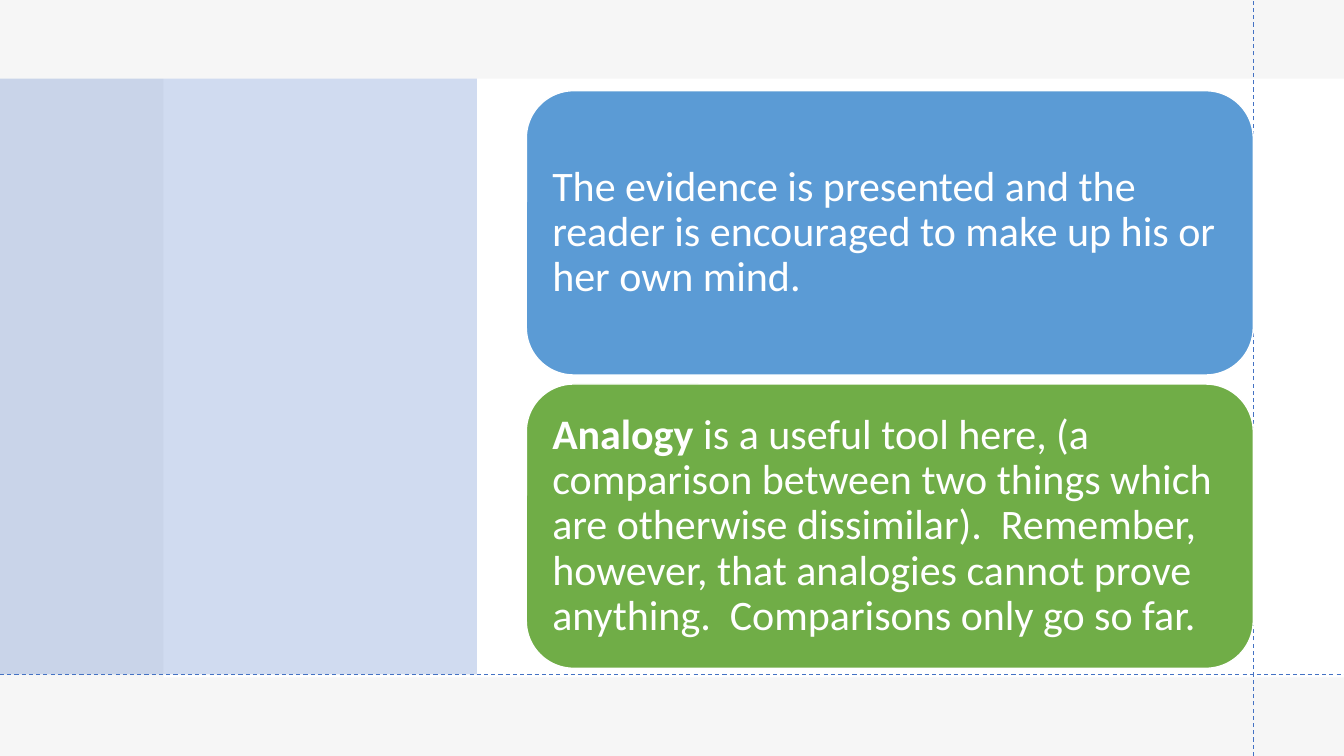
from pptx import Presentation
from pptx.dml.color import RGBColor
from pptx.enum.dml import MSO_LINE
from pptx.enum.shapes import MSO_CONNECTOR, MSO_SHAPE
from pptx.enum.text import MSO_ANCHOR, PP_ALIGN
from pptx.oxml.ns import qn
from pptx.util import Inches, Pt
from lxml.etree import SubElement

COLORS = {
    "white": "FFFFFF",
    "gray": "E7E6E6",
    "accent": "4472C4",
    "blue": "5B9BD5",
    "green": "70AD47",
}

presentation = Presentation()
presentation.slide_width = Inches(13.33)
presentation.slide_height = Inches(7.5)
slide = presentation.slides.add_slide(presentation.slide_layouts[6])


def add_box(kind, box, color, opacity=100):
    shape = slide.shapes.add_shape(kind, *[Inches(length) for length in box])
    shape.shadow.inherit = False
    shape.fill.solid()
    shape.fill.fore_color.rgb = RGBColor.from_string(COLORS[color])
    shape.line.fill.background()
    if opacity < 100:
        fill_color = shape._element.spPr.find(qn("a:solidFill"))[0]
        SubElement(fill_color, qn("a:alpha")).set("val", str(opacity * 1000))
    return shape


def add_text(paragraph, text, size=30, bold=False, color="white", font="Calibri"):
    run = paragraph.add_run()
    run.text = text
    run.font.size = Pt(size)
    run.font.bold = bold
    run.font.name = font
    run.font.color.rgb = RGBColor.from_string(COLORS[color])


backdrop = [
    ((0, 0, 13.33, 7.5), "white", 100),
    ((0, 0, 13.33, 7.5), "gray", 35),
    ((1.62, 0.78, 11.71, 5.94), "white", 100),
    ((0, 0.78, 4.73, 5.91), "accent", 25),
]
for box, color, opacity in backdrop:
    add_box(MSO_SHAPE.RECTANGLE, box, color, opacity)

guides = [(12.43, 7.5, 12.43, 0), (0, 6.69, 13.33, 6.69)]
for ends in guides:
    guide = slide.shapes.add_connector(
        MSO_CONNECTOR.STRAIGHT, *[Inches(length) for length in ends]
    )
    guide.line.color.rgb = RGBColor.from_string(COLORS["accent"])
    guide.line.width = Pt(0.75)
    guide.line.dash_style = MSO_LINE.DASH
    SubElement(guide._element.spPr, qn("a:effectLst"))

cards = [
    ("blue", [
        ("The evidence is presented and the reader is encouraged "
         "to make up his or her own mind.", False),
    ]),
    ("green", [
        ("Analogy", True),
        (" is a useful tool here, (a comparison between two things which are "
         "otherwise dissimilar).  Remember, however, that analogies cannot prove "
         "anything.  Comparisons only go so far.", False),
    ]),
]
for index, (color, runs) in enumerate(cards):
    box = (5.22, 0.9 + 2.91 * index, 7.21, 2.82)
    card = add_box(MSO_SHAPE.ROUNDED_RECTANGLE, box, color)
    card.line.color.rgb = RGBColor.from_string(COLORS["white"])
    card.line.width = Pt(1)
    frame = card.text_frame
    frame.word_wrap = True
    frame.vertical_anchor = MSO_ANCHOR.MIDDLE
    frame.margin_left = frame.margin_right = Inches(0.12)
    frame.margin_top = frame.margin_bottom = Inches(0.12)
    paragraph = frame.paragraphs[0]
    paragraph.alignment = PP_ALIGN.LEFT
    paragraph.line_spacing = 0.9
    for text, bold in runs:
        add_text(paragraph, text, bold=bold)

presentation.save("out.pptx")
